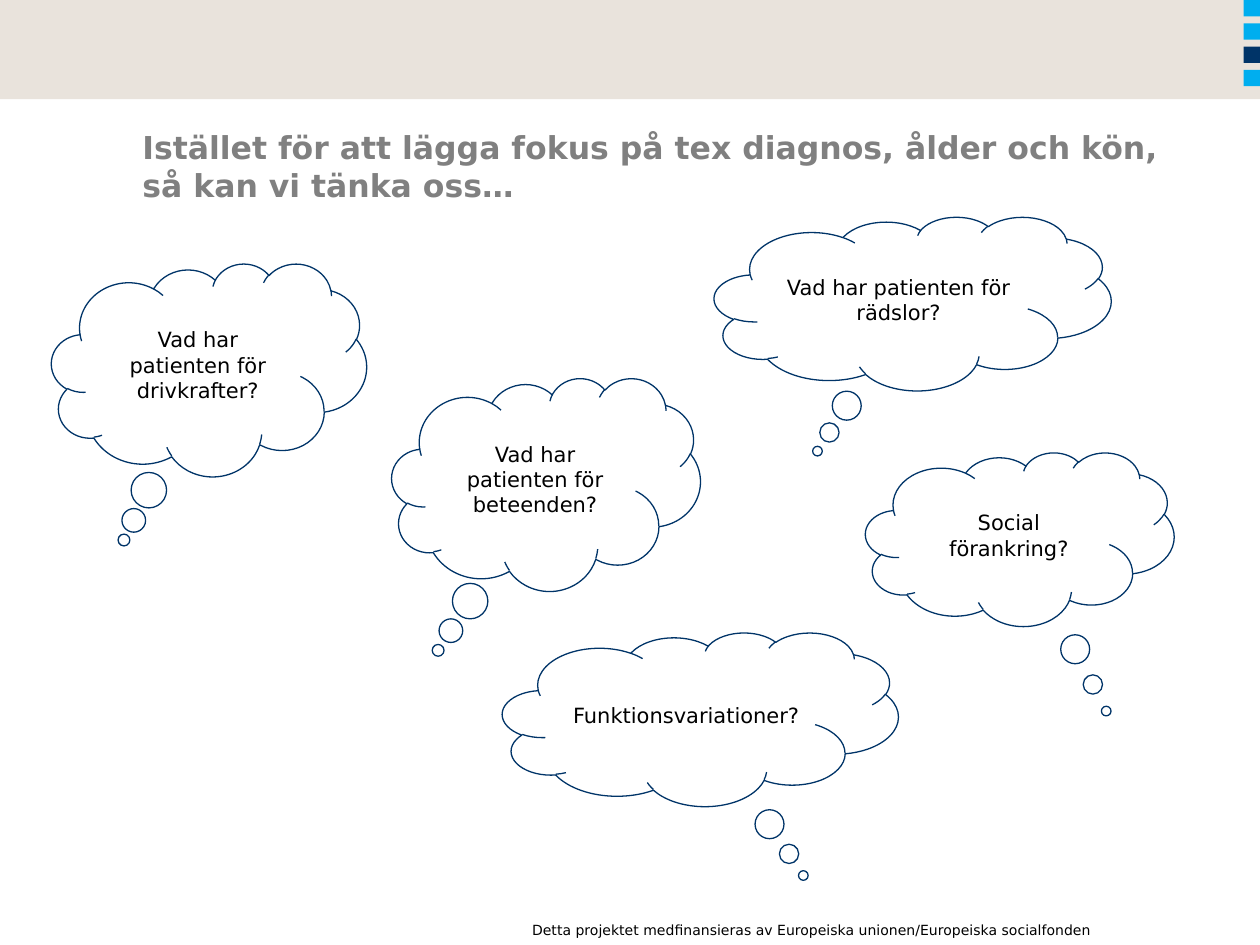
from dataclasses import dataclass

from pptx import Presentation
from pptx.dml.color import RGBColor
from pptx.enum.shapes import MSO_SHAPE
from pptx.enum.text import MSO_ANCHOR, PP_ALIGN
from pptx.util import Cm, Pt

RECTANGLE, CLOUD = MSO_SHAPE.RECTANGLE, MSO_SHAPE.CLOUD_CALLOUT
LEFT, CENTER, RIGHT = PP_ALIGN.LEFT, PP_ALIGN.CENTER, PP_ALIGN.RIGHT
TOP, MIDDLE = MSO_ANCHOR.TOP, MSO_ANCHOR.MIDDLE
TITLE_ONLY = 5


@dataclass(frozen=True)
class Theme:
    font: str = "DejaVu Sans"
    band: str = "E9E3DC"
    sky: str = "00AEEF"
    navy: str = "003468"
    title: str = "808080"
    text: str = "000000"
    paper: str = "FFFFFF"
    title_size: int = 18
    cloud_size: int = 12
    footer_size: int = 8


THEME = Theme()

# Content: lengths in cm
TITLE = "Istället för att lägga fokus på tex diagnos, ålder och kön, så kan vi tänka oss…"
FOOTER = "Detta projektet medfinansieras av Europeiska unionen/Europeiska socialfonden"
CLOUDS = [  # text, (left, top, width, height), tail offset from the centre
    ("Vad har patienten för drivkrafter?", (1.04, 5.31, 6.35, 4.29), (-0.27, 0.8)),
    ("Vad har patienten för beteenden?", (7.9, 7.62, 6.22, 4.29), (-0.35, 0.78)),
    ("Vad har patienten för rädslor?", (14.4, 4.37, 8, 3.5), (-0.24, 0.85)),
    ("Social förankring?", (17.45, 9.12, 6.22, 3.5), (0.28, 0.99)),
    ("Funktionsvariationer?", (10.13, 12.75, 7.98, 3.5), (0.26, 0.9)),
]
SQUARES = [THEME.sky, THEME.sky, THEME.navy, THEME.sky]
SQUARE_SIZE, SQUARE_STEP = 0.33, 0.47
SLIDE_WIDTH, SLIDE_HEIGHT, BAND_HEIGHT = 25.4, 19.05, 2


def write(box, text, size, color=THEME.text, bold=False, align=LEFT, anchor=TOP):
    frame = box.text_frame
    frame.word_wrap = True
    frame.vertical_anchor = anchor
    frame.margin_left = frame.margin_right = Cm(0.25)
    frame.margin_top = frame.margin_bottom = Cm(0.13)
    para = frame.paragraphs[0]
    para.alignment = align
    para.line_spacing = 1
    para.space_before = Pt(0)
    span = para.add_run()
    span.text = text
    span.font.name = THEME.font
    span.font.size = Pt(size)
    span.font.bold = bold
    span.font.color.rgb = RGBColor.from_string(color)


def add_shape(page, kind, place, fill=None, line=None):
    shape = page.shapes.add_shape(kind, *map(Cm, place))
    shape.shadow.inherit = False
    if fill:
        shape.fill.solid()
        shape.fill.fore_color.rgb = RGBColor.from_string(fill)
    else:
        shape.fill.background()
    if line:
        shape.line.color.rgb = RGBColor.from_string(line)
        shape.line.width = Pt(0.75)
    else:
        shape.line.fill.background()
    return shape


def main():
    deck = Presentation()
    deck.slide_width, deck.slide_height = Cm(SLIDE_WIDTH), Cm(SLIDE_HEIGHT)
    page = deck.slides.add_slide(deck.slide_layouts[TITLE_ONLY])

    # Header band and the column of squares at its right edge
    add_shape(page, RECTANGLE, (0, 0, SLIDE_WIDTH, BAND_HEIGHT), fill=THEME.band)
    for row, color in enumerate(SQUARES):
        place = (SLIDE_WIDTH - SQUARE_SIZE, row * SQUARE_STEP, SQUARE_SIZE, SQUARE_SIZE)
        add_shape(page, RECTANGLE, place, fill=color)

    # Title
    title = page.shapes.title
    title.left, title.top, title.width, title.height = map(Cm, (2.62, 2.46, 21.08, 1.8))
    title.fill.solid()
    title.fill.fore_color.rgb = RGBColor.from_string(THEME.paper)
    write(title, TITLE, THEME.title_size, color=THEME.title, bold=True)

    # Thought clouds
    for text, place, tail in CLOUDS:
        cloud = add_shape(page, CLOUD, place, line=THEME.navy)
        cloud.adjustments[0], cloud.adjustments[1] = tail
        write(cloud, text, THEME.cloud_size, align=CENTER, anchor=MIDDLE)

    # Footer
    footer = page.shapes.add_textbox(*map(Cm, (10.19, 18.44, 12.07, 0.61)))
    write(footer, FOOTER, THEME.footer_size, align=RIGHT)

    deck.save("out.pptx")


if __name__ == "__main__":
    main()
